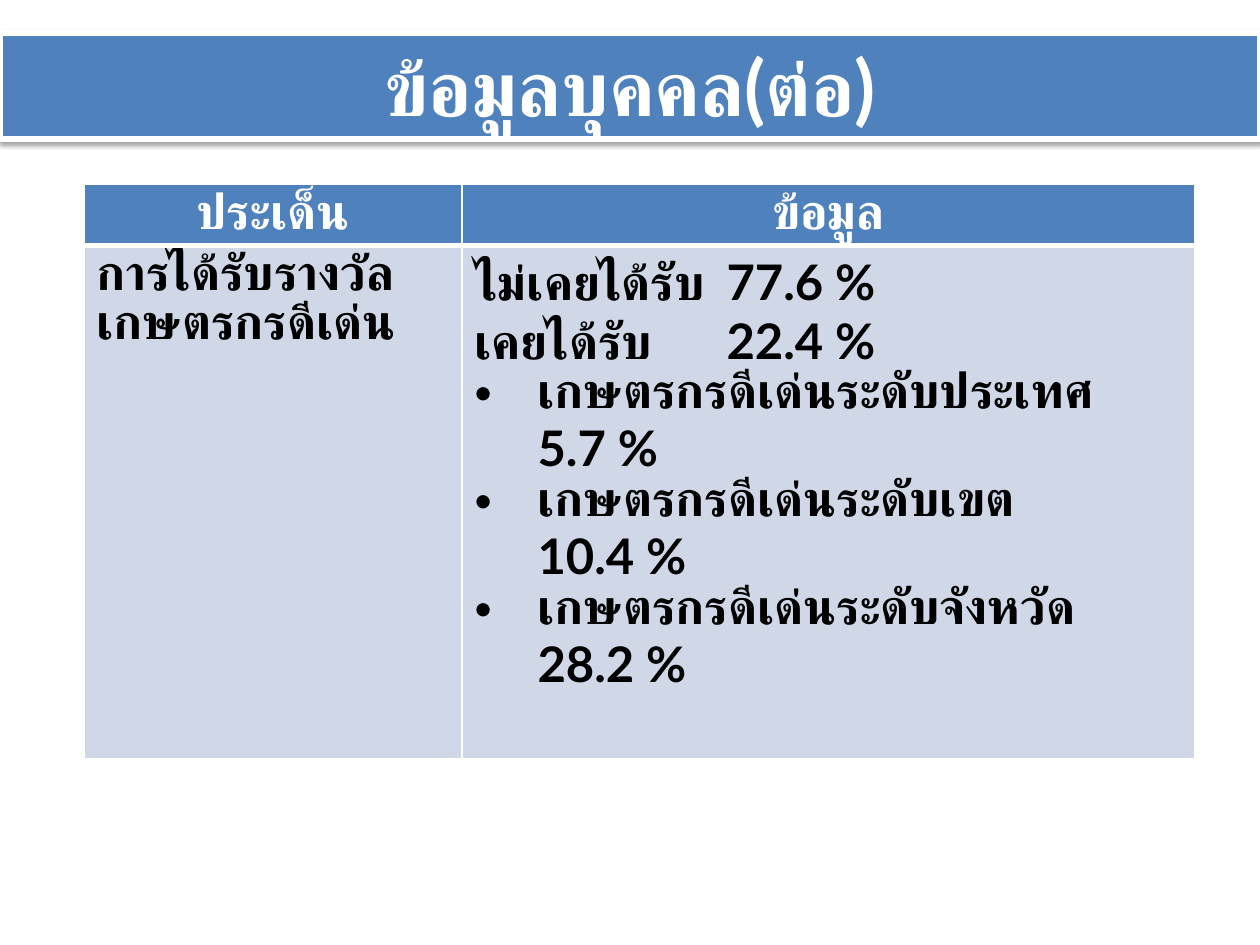
from dataclasses import dataclass

from lxml.etree import SubElement
from pptx import Presentation
from pptx.dml.color import RGBColor
from pptx.enum.shapes import MSO_SHAPE
from pptx.enum.text import MSO_ANCHOR, MSO_AUTO_SIZE, PP_ALIGN
from pptx.oxml import parse_xml
from pptx.oxml.ns import nsdecls, qn
from pptx.util import Emu, Pt

PIXELS_PER_INCH = 126
BLUE, PALE, WHITE, BLACK = "4F81BD", "D0D8E8", "FFFFFF", "000000"
SIDES = ("L", "R", "T", "B")
TAB_POSITION = 252
BULLET_INDENT = 63


@dataclass
class Line:
    text: str
    bullet: bool = False


@dataclass
class TableRow:
    height: int
    fill: str
    color: str
    alignment: PP_ALIGN
    borders: tuple[int, int, int, int]
    cells: list[list[Line]]


ROWS = [
    TableRow(60, BLUE, WHITE, PP_ALIGN.CENTER, (1, 1, 1, 3),
             [[Line("ประเด็น")], [Line("ข้อมูล")]]),
    TableRow(513, PALE, BLACK, PP_ALIGN.LEFT, (1, 1, 3, 1), [
        [Line("การได้รับรางวัล"), Line("เกษตรกรดีเด่น")],
        [
            Line("ไม่เคยได้รับ\t77.6 %"),
            Line("เคยได้รับ\t22.4 %"),
            Line("เกษตรกรดีเด่นระดับประเทศ\v5.7 %", True),
            Line("เกษตรกรดีเด่นระดับเขต\v10.4 %", True),
            Line("เกษตรกรดีเด่นระดับจังหวัด\v28.2 %", True),
        ],
    ]),
]
COLUMN_WIDTHS = (378, 733)


def px(length: int) -> Emu:
    return Emu(round(length * 914400 / PIXELS_PER_INCH))


def rgb(value: str) -> RGBColor:
    return RGBColor.from_string(value)


def paint(target, color: str) -> None:
    target.fill.solid()
    target.fill.fore_color.rgb = rgb(color)


def write_paragraph(paragraph, text: str, size: int, color: str, alignment: PP_ALIGN) -> None:
    paragraph.text = text
    paragraph.alignment = alignment
    formats = {"name": "Lato", "size": Pt(size), "bold": True}
    for run in paragraph.runs:
        for name, value in formats.items():
            setattr(run.font, name, value)
        run.font.color.rgb = rgb(color)


def set_indent(paragraph, line: Line) -> None:
    properties = paragraph._p.get_or_add_pPr()
    if line.bullet:
        properties.set("marL", str(px(BULLET_INDENT)))
        properties.set("indent", str(-px(BULLET_INDENT)))
        SubElement(properties, qn("a:buFont"), typeface="Arial")
        SubElement(properties, qn("a:buChar"), char="•")
    elif "\t" in line.text:
        tabs = SubElement(properties, qn("a:tabLst"))
        SubElement(tabs, qn("a:tab"), pos=str(px(TAB_POSITION)), algn="l")


def set_borders(cell, widths: tuple[int, int, int, int]) -> None:
    properties = cell._tc.get_or_add_tcPr()
    for index, (side, width) in enumerate(zip(SIDES, widths)):
        properties.insert(index, parse_xml(
            f'<a:ln{side} {nsdecls("a")} w="{Pt(width)}"><a:solidFill>'
            f'<a:srgbClr val="{WHITE}"/></a:solidFill></a:ln{side}>'))


def add_title(slide, text: str) -> None:
    shape = slide.shapes.add_shape(MSO_SHAPE.RECTANGLE, px(0), px(33), px(1260), px(106))
    paint(shape, BLUE)
    shape.line.color.rgb = rgb(WHITE)
    shape.line.width = Pt(3)
    shape.shadow.inherit = False
    effects = shape._element.spPr.find(qn("a:effectLst"))
    effects.append(parse_xml(
        f'<a:outerShdw {nsdecls("a")} blurRad="{Pt(3.1)}" dist="{Pt(1.6)}" dir="5400000" '
        f'rotWithShape="0"><a:srgbClr val="{BLACK}"><a:alpha val="38000"/></a:srgbClr>'
        '</a:outerShdw>'))
    frame = shape.text_frame
    settings = {"word_wrap": True, "auto_size": MSO_AUTO_SIZE.SHAPE_TO_FIT_TEXT,
                "vertical_anchor": MSO_ANCHOR.MIDDLE}
    for name, value in settings.items():
        setattr(frame, name, value)
    write_paragraph(frame.paragraphs[0], text, 44, WHITE, PP_ALIGN.CENTER)


def fill_cell(cell, row: TableRow, lines: list[Line]) -> None:
    paint(cell, row.fill)
    set_borders(cell, row.borders)
    frame = cell.text_frame
    for index, line in enumerate(lines):
        paragraph = frame.add_paragraph() if index else frame.paragraphs[0]
        write_paragraph(paragraph, line.text, 28, row.color, row.alignment)
        set_indent(paragraph, line)


def add_data_table(slide, rows: list[TableRow]) -> None:
    height = sum(row.height for row in rows)
    table = slide.shapes.add_table(len(rows), len(COLUMN_WIDTHS), px(84), px(184),
                                   px(sum(COLUMN_WIDTHS)), px(height)).table
    for column, width in zip(table.columns, COLUMN_WIDTHS):
        column.width = px(width)
    for table_row, row in zip(table.rows, rows):
        table_row.height = px(row.height)
        for cell, lines in zip(table_row.cells, row.cells):
            fill_cell(cell, row, lines)


def main() -> None:
    presentation = Presentation()
    presentation.slide_width = px(1260)
    presentation.slide_height = px(945)
    slide = presentation.slides.add_slide(presentation.slide_layouts[6])
    add_data_table(slide, ROWS)
    add_title(slide, "ข้อมูลบุคคล(ต่อ)")
    presentation.save("out.pptx")


if __name__ == "__main__":
    main()
